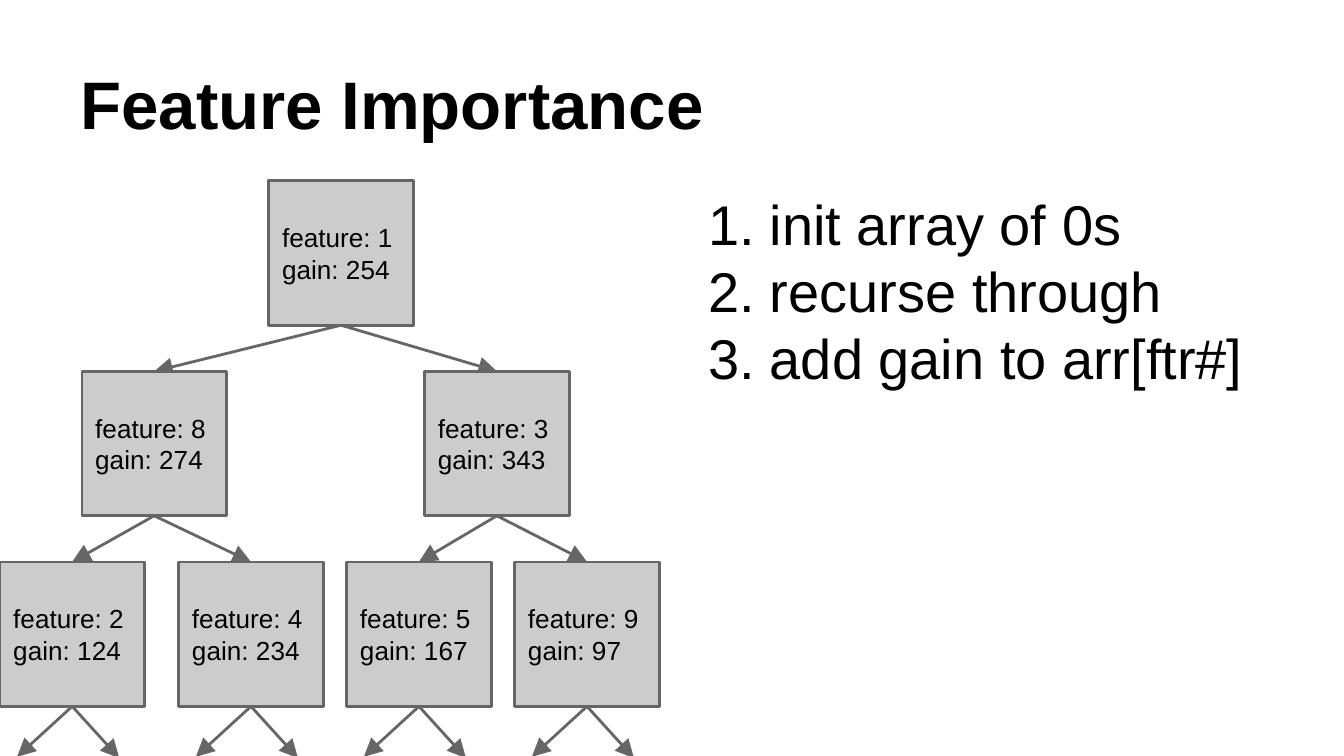
from lxml import etree
from pptx import Presentation, util as u
from pptx.dml.color import RGBColor
from pptx.enum import shapes, text
from pptx.oxml.ns import qn

COLORS = {"text": "000000", "node": "CCCCCC", "edge": "666666"}
FONT = "Arial"
WIDTH = u.Inches(10)
HEIGHT = u.Emu(WIDTH * 9 // 16)
CELL = WIDTH / 100
NODE = 10.75
STEPS = ["init array of 0s", "recurse through", "add gain to arr[ftr#]"]
LEVELS = [
    [(20, 1, 254)],
    [(6.1, 8, 274), (31.6, 3, 343)],
    [(0, 2, 124), (13.3, 4, 234), (25.8, 5, 167), (38.3, 9, 97)],
]


def grid(*cells):
    """Turn grid columns and rows into slide lengths."""
    return [u.Emu(round(c * CELL)) for c in cells]


def color(name):
    """Look up a palette colour."""
    return RGBColor.from_string(COLORS[name])


def write(sp, lines, size, anchor, bold=False):
    """Fill a shape with left-aligned paragraphs."""
    tf = sp.text_frame
    tf.word_wrap = True
    tf.vertical_anchor = anchor
    tf.margin_left = tf.margin_right = tf.margin_top = tf.margin_bottom = u.Inches(0.1)
    tf.text = "\n".join(lines)
    for p in tf.paragraphs:
        p.alignment = text.PP_ALIGN.LEFT
        f = p.runs[0].font
        f.name, f.size, f.bold = FONT, u.Pt(size), bold
        f.color.rgb = color("text")
    return tf


def title(s, box):
    """Place the slide title."""
    sp = s.shapes.add_textbox(*grid(*box))
    write(sp, ["Feature Importance"], 36, text.MSO_ANCHOR.BOTTOM, bold=True)


def numbered_list(s, box):
    """Place the numbered steps."""
    sp = s.shapes.add_textbox(*grid(*box))
    for p in write(sp, STEPS, 30, text.MSO_ANCHOR.TOP).paragraphs:
        pPr = p._p.get_or_add_pPr()
        pPr.set("marL", str(u.Inches(0.5)))
        pPr.set("indent", str(-u.Inches(0.46)))
        etree.SubElement(pPr, qn("a:buFont"), typeface=FONT)
        etree.SubElement(pPr, qn("a:buAutoNum"), type="arabicPeriod")


def node(s, x, y, feature, gain):
    """Place one tree node."""
    sp = s.shapes.add_shape(shapes.MSO_SHAPE.RECTANGLE, *grid(x, y, NODE, NODE))
    sp.shadow.inherit = False
    sp.fill.solid()
    sp.fill.fore_color.rgb = color("node")
    sp.line.color.rgb = color("edge")
    sp.line.width = u.Pt(1.5)
    write(sp, [f"feature: {feature}", f"gain: {gain}"], 14, text.MSO_ANCHOR.MIDDLE)


def arrow(s, x1, y1, x2, y2):
    """Draw an arrow between two grid points."""
    c = s.shapes.add_connector(shapes.MSO_CONNECTOR.STRAIGHT, *grid(x1, y1, x2, y2))
    c.line.color.rgb = color("edge")
    c.line.width = u.Pt(1.5)
    ln = c.line._get_or_add_ln()
    etree.SubElement(ln, qn("a:tailEnd"), type="triangle", w="lg", len="lg")
    etree.SubElement(c._element.spPr, qn("a:effectLst"))


def tree(s, top, pitch):
    """Place the tree, level by level, with arrows to the children."""
    for depth, level in enumerate(LEVELS):
        y = top + depth * pitch
        for i, (x, feature, gain) in enumerate(level):
            node(s, x, y, feature, gain)
            mid = x + NODE / 2
            if depth + 1 < len(LEVELS):
                children = LEVELS[depth + 1][2 * i:2 * i + 2]
                ends = [(child[0] + NODE / 2, y + pitch) for child in children]
            else:
                ends = [(mid - 4.1, y + NODE + 3.75), (mid + 3.5, y + NODE + 3.85)]
            for end in ends:
                arrow(s, mid, y + NODE, *end)


def main():
    """Build and save the slide."""
    prs = Presentation()
    prs.slide_width, prs.slide_height = WIDTH, HEIGHT
    s = prs.slides.add_slide(prs.slide_layouts[6])
    title(s, (5, 2.25, 90, 9.4))
    numbered_list(s, (51.3, 13.1, 43.7, 40.7))
    tree(s, 13.45, 14.18)
    prs.save("out.pptx")


if __name__ == "__main__":
    main()
